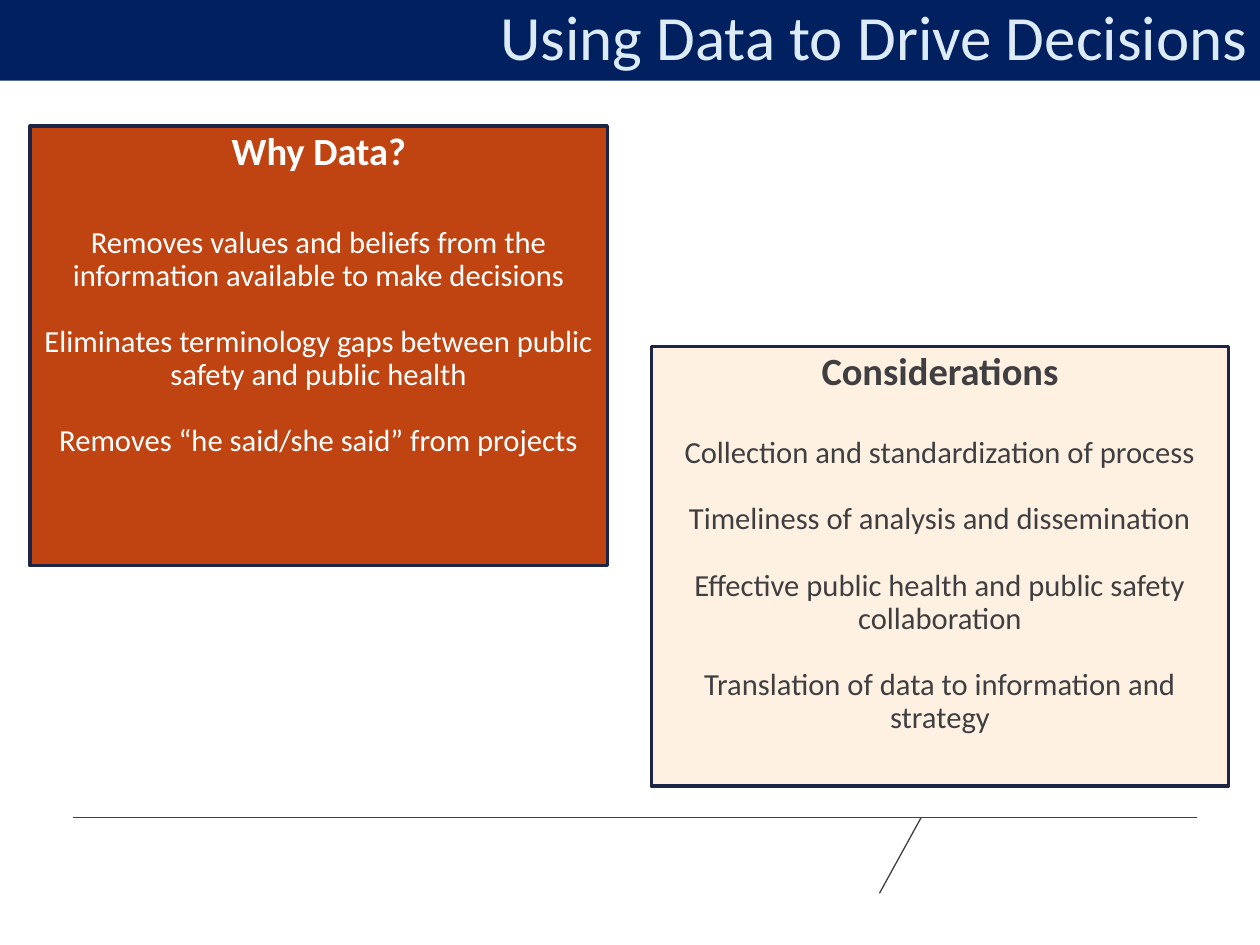
from lxml.etree import SubElement
from pptx import Presentation
from pptx.dml.color import RGBColor
from pptx.enum.shapes import MSO_CONNECTOR, MSO_SHAPE
from pptx.enum.text import MSO_ANCHOR, PP_ALIGN
from pptx.oxml.ns import qn
from pptx.util import Inches, Pt

NAVY = RGBColor(0x00, 0x20, 0x60)
PALE_BLUE = RGBColor(0xDC, 0xEB, 0xF6)
RUST = RGBColor(0xC0, 0x44, 0x12)
PEACH = RGBColor(0xFF, 0xC6, 0x85)
OUTLINE = RGBColor(0x1C, 0x25, 0x46)
GRAY = RGBColor(0x3F, 0x3F, 0x42)
WHITE = RGBColor(0xFF, 0xFF, 0xFF)

PANEL_W, PANEL_H = 4.58, 3.49
TITLE = {"size": Pt(36), "color": PALE_BLUE}
HEADING = {"size": Pt(22), "bold": True}
BODY = {"size": Pt(17.5)}


def write(tf, lines, fmt, align=PP_ALIGN.CENTER, gap=0):
    tf.word_wrap = True
    for i, line in enumerate(lines):
        p = tf.paragraphs[0] if i == 0 else tf.add_paragraph()
        p.alignment, p.line_spacing = align, 0.9
        if i:
            p.space_before = Pt(gap)
        r = p.add_run()
        r.text = line
        r.font.name = "Calibri"
        for name, value in fmt.items():
            if name == "color":
                r.font.color.rgb = value
            else:
                setattr(r.font, name, value)


def add_rect(s, x, y, w, h, fill, line=None, opacity=None):
    sp = s.shapes.add_shape(MSO_SHAPE.RECTANGLE, Inches(x), Inches(y), Inches(w), Inches(h))
    sp.shadow.inherit = False
    sp.fill.solid()
    sp.fill.fore_color.rgb = fill
    if opacity:
        color = sp.fill._xPr.find(qn("a:solidFill"))[0]
        SubElement(color, qn("a:alpha")).set("val", str(opacity * 1000))
    if line is None:
        sp.line.fill.background()
    else:
        sp.line.color.rgb = line
        sp.line.width = Pt(2)
    return sp


def add_text(s, x, y, w, h, lines, fmt, gap=0):
    sp = s.shapes.add_textbox(Inches(x), Inches(y), Inches(w), Inches(h))
    write(sp.text_frame, lines, fmt, gap=gap)


def add_line(s, x1, y1, x2, y2):
    sp = s.shapes.add_connector(MSO_CONNECTOR.STRAIGHT, Inches(x1), Inches(y1), Inches(x2), Inches(y2))
    sp.line.color.rgb = GRAY
    sp.line.width = Pt(0.75)
    SubElement(sp._element.spPr, qn("a:effectLst"))


def add_panel(s, x, y, body_top, fill, color, heading, points, opacity=None):
    add_rect(s, x, y, PANEL_W, PANEL_H, fill, OUTLINE, opacity)
    add_text(s, x, y, PANEL_W, 0.48, [heading], {**HEADING, "color": color})
    # Points are set one blank line apart
    add_text(s, x, y + body_top, PANEL_W, PANEL_H - body_top, points,
             {**BODY, "color": color}, gap=19)


def main():
    prs = Presentation()
    prs.slide_width, prs.slide_height = Inches(10), Inches(7.5)
    s = prs.slides.add_slide(prs.slide_layouts[6])

    # Footer rules
    add_line(s, 0.58, 6.49, 9.5, 6.49)
    add_line(s, 6.98, 7.09, 7.31, 6.49)

    # Title bar
    bar = add_rect(s, 0, 0, 10, 0.64, NAVY)
    bar.text_frame.vertical_anchor = MSO_ANCHOR.MIDDLE
    write(bar.text_frame, ["Using Data to Drive Decisions"], TITLE, PP_ALIGN.RIGHT)

    # Panels
    add_panel(s, 0.24, 1, 0.75, RUST, WHITE, "Why Data?", [
        "Removes values and beliefs from the information available to make decisions",
        "Eliminates terminology gaps between public safety and public health",
        "Removes “he said/she said” from projects",
    ])
    add_panel(s, 5.17, 2.75, 0.67, PEACH, GRAY, "Considerations", [
        "Collection and standardization of process",
        "Timeliness of analysis and dissemination",
        "Effective public health and public safety collaboration",
        "Translation of data to information and strategy",
    ], opacity=23)

    prs.save("out.pptx")


if __name__ == "__main__":
    main()
